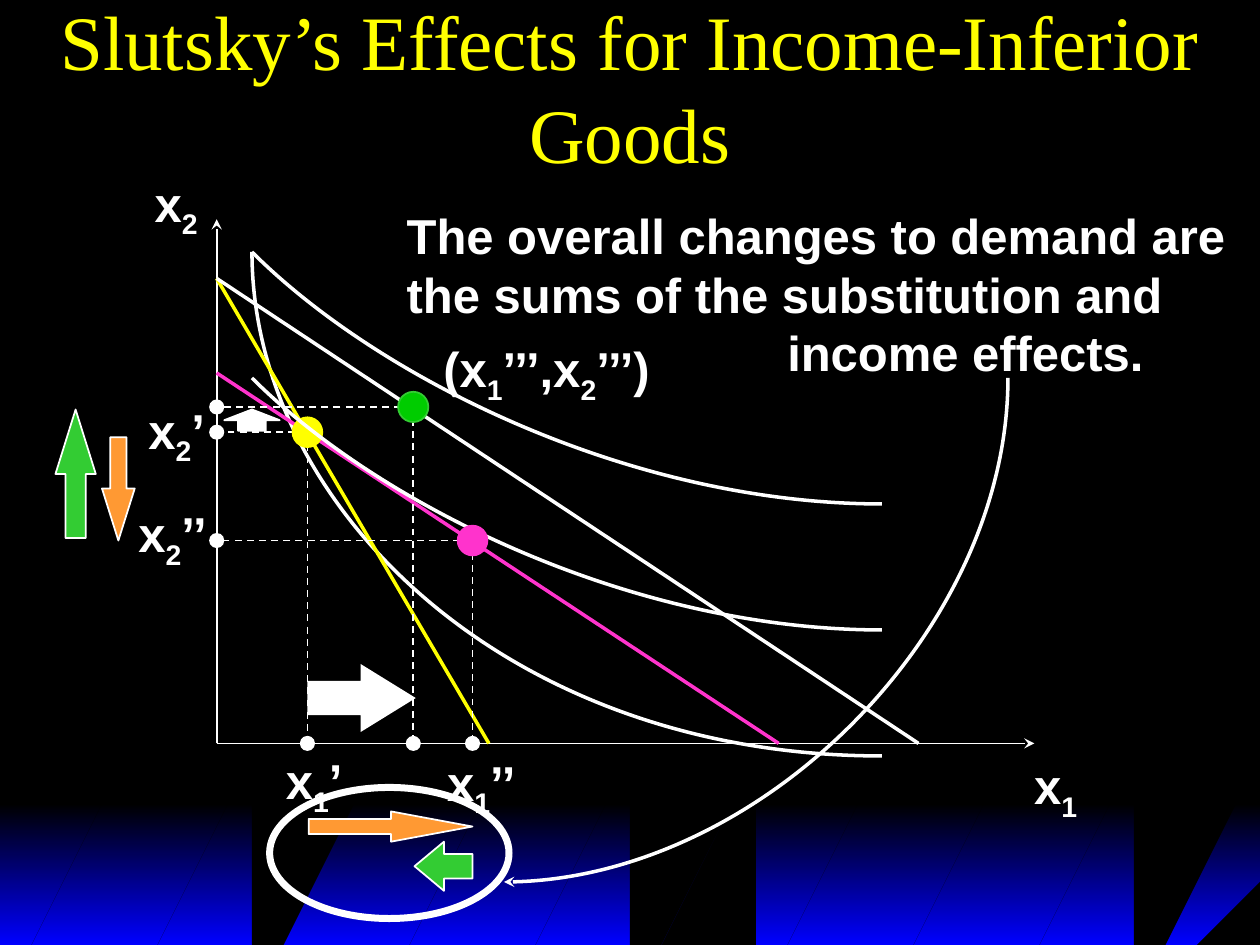
from lxml import etree
from pptx import Presentation, util as u
from pptx.dml.color import RGBColor
from pptx.enum import dml, shapes, text
from pptx.oxml import ns

COLS, ROWS = 10, 7.5
UNIT = u.Inches(1)  # one grid column or row
SHAPE = shapes.MSO_SHAPE

WHITE, BLACK, YELLOW, PINK = "FFFFFF", "000000", "FFFF00", "FF33CC"
GREEN, ORANGE, BLUE = "33CC33", "FF9933", "0000FF"

ORIGIN_X, ORIGIN_Y = 1.72, 5.9
INITIAL, SUBSTITUTED, FINAL = (2.44, 3.43), (3.28, 3.23), (3.75, 4.29)
BUNDLES = (INITIAL, FINAL, SUBSTITUTED)
STRIPES = (0, 0.75, 1.53, 2.3, 3.07, 3.85, 4.6, 5.38, 6.17, 6.96, 7.78, 8.57)


def rgb(color):
    return RGBColor.from_string(color)


def grid(*lengths):
    return [int(n * UNIT) for n in lengths]


def style_line(line, color, width, dashed=False, arrow=False):
    line.color.rgb = rgb(color)
    line.width = u.Pt(width)
    if dashed:
        line.dash_style = dml.MSO_LINE.DASH
    if arrow:
        ln = line.fill._xPr
        etree.SubElement(ln, ns.qn("a:tailEnd"), type="stealth")


def style_shape(sp, fill=None, line=None, width=1):
    sp.shadow.inherit = False
    if fill:
        sp.fill.solid()
        sp.fill.fore_color.rgb = rgb(fill)
    else:
        sp.fill.background()
    if line:
        style_line(sp.line, line, width)
    else:
        sp.line.fill.background()


def add_shape(s, kind, box, fill=None, line=None, width=1, adj=()):
    sp = s.shapes.add_shape(kind, *grid(*box))
    style_shape(sp, fill, line, width)
    for i, value in enumerate(adj):
        sp.adjustments[i] = value
    return sp


def add_dot(s, center, size, fill, line=None):
    x, y = center
    add_shape(s, SHAPE.OVAL, (x - size / 2, y - size / 2, size, size), fill, line)


def add_line(s, start, end, color=WHITE, width=1, dashed=False, arrow=False):
    cn = s.shapes.add_connector(shapes.MSO_CONNECTOR.STRAIGHT, *grid(*start, *end))
    style_line(cn.line, color, width, dashed, arrow)
    etree.SubElement(cn._element.spPr, ns.qn("a:effectLst"))


def add_outline(s, points, close):
    builder = s.shapes.build_freeform(*points[0], scale=UNIT)
    builder.add_line_segments(points[1:], close=close)
    return builder.convert_to_shape()


def add_curve(s, *points, arrow=False):
    """Draw a cubic curve: start, two control points, end."""
    sp = add_outline(s, points, close=False)
    style_shape(sp)
    style_line(sp.line, WHITE, 2, arrow=arrow)
    segments = list(sp._element.iter(ns.qn("a:lnTo")))
    curve = etree.SubElement(segments[0].getparent(), ns.qn("a:cubicBezTo"))
    for segment in segments:
        curve.append(segment[0])
        segment.getparent().remove(segment)


def add_text(s, box, paragraphs, size=28, font="Arial", color=WHITE, bold=True,
             wrap=False):
    """Write paragraphs, each a list of strings; every second one is a subscript."""
    tf = s.shapes.add_textbox(*grid(*box)).text_frame
    tf.word_wrap = wrap
    for i, runs in enumerate(paragraphs):
        p = tf.paragraphs[0] if i == 0 else tf.add_paragraph()
        p.font.size, p.font.name, p.font.bold = u.Pt(size), font, bold
        p.font.color.rgb = rgb(color)
        for j, run in enumerate(runs):
            r = p.add_run()
            r.text = run
            r.font.size, r.font.name, r.font.bold = u.Pt(size), font, bold
            r.font.color.rgb = rgb(color)
            if j % 2:
                r.font._element.set("baseline", "-25000")
    return tf


def add_background(s):
    s.background.fill.solid()
    s.background.fill.fore_color.rgb = rgb(BLACK)
    band = add_shape(s, SHAPE.RECTANGLE, (0, 6.38, COLS, ROWS - 6.38), BLACK)
    band.fill.gradient()
    band.fill.gradient_angle = 270
    for stop, position, color in zip(band.fill.gradient_stops, (0, 1), (BLACK, BLUE)):
        stop.position, stop.color.rgb = position, rgb(color)
    outlines = [[(x, ROWS), (x + 0.84, 6.34), (x + 1, 6.34), (x + 0.17, ROWS)]
                for x in STRIPES]
    outlines.append([(9.4, ROWS), (COLS, 6.64), (COLS, 6.87), (9.56, ROWS)])
    for points in outlines:
        style_shape(add_outline(s, points, close=True), BLACK)


def add_graph(s):
    origin = (ORIGIN_X, ORIGIN_Y)
    add_line(s, origin, (ORIGIN_X, 1.74), arrow=True)
    add_line(s, origin, (8.21, ORIGIN_Y), arrow=True)
    add_curve(s, (7.27, 5.61), (4.42, 5.61), (2.1, 4.07), (2.1, 2.17))
    for top, right, color in ((2.21, 3.88, YELLOW), (2.21, 7.29, WHITE),
                              (2.96, 6.18, PINK)):
        add_line(s, (ORIGIN_X, top), (right, ORIGIN_Y), color, 2)
    for x, y in BUNDLES:
        for foot in ((x, ORIGIN_Y), (ORIGIN_X, y)):
            add_line(s, (x, y), foot, dashed=True)
            add_dot(s, foot, 0.12, WHITE)
    add_curve(s, (6.68, 4.24), (4.64, 4.08), (2.99, 3.33), (2.38, 2.28))
    add_dot(s, INITIAL, 0.25, YELLOW)
    add_dot(s, SUBSTITUTED, 0.24, "00CC00", GREEN)
    add_curve(s, (7.41, 5.35), (4.87, 5.17), (2.85, 4.12), (2.45, 2.75))
    add_dot(s, FINAL, 0.25, PINK)


def add_effect_arrows(s):
    for kind, box, fill, line, head in (
            (SHAPE.DOWN_ARROW, (0.81, 3.47, 0.26, 0.82), ORANGE, WHITE, 1.59),
            (SHAPE.RIGHT_ARROW, (2.45, 6.44, 1.3, 0.24), ORANGE, WHITE, 2.69),
            (SHAPE.LEFT_ARROW, (3.29, 6.68, 0.46, 0.39), GREEN, WHITE, 0.6),
            (SHAPE.UP_ARROW, (0.44, 3.25, 0.32, 1.02), GREEN, WHITE, 1.6),
            (SHAPE.UP_ARROW, (1.78, 3.25, 0.44, 0.17), WHITE, WHITE, 0.5),
            (SHAPE.RIGHT_ARROW, (2.44, 5.27, 0.86, 0.54), WHITE, None, 0.81)):
        add_shape(s, kind, box, fill, line, adj=(0.5, head))
    add_shape(s, SHAPE.OVAL, (2.14, 6.25, 1.9, 1.04), line=WHITE, width=4)
    add_curve(s, (7.89, 3.07), (7.89, 5.11), (6.23, 6.79), (4.12, 6.88), arrow=True)


def add_labels(s):
    for x, y, width, *runs in (
            (1.13, 1.33, 0.57, "x", "2"),
            (8.11, 5.95, 0.57, "x", "1"),
            (1.08, 3.13, 0.67, "x", "2", "’"),
            (1, 3.95, 0.78, "x", "2", "’’"),
            (2.17, 5.91, 0.67, "x", "1", "’"),
            (3.45, 5.92, 0.78, "x", "1", "’’"),
            (3.42, 2.64, 1.94, "(x", "1", "’’’,x", "2", "’’’)")):
        add_text(s, (x, y, width, 0.57), [runs])


def add_title(s):
    tf = add_text(s, (0, 0.02, COLS, 1.33),
                  [["Slutsky’s Effects for Income-Inferior Goods"]],
                  44, "Times New Roman", YELLOW, bold=False, wrap=True)
    tf.vertical_anchor = text.MSO_ANCHOR.MIDDLE
    tf.paragraphs[0].alignment = text.PP_ALIGN.CENTER


def add_conclusion(s):
    tf = add_text(s, (3.13, 1.58, 6.8, 1.5),
                  [["The overall changes to demand are"],
                   ["the sums of the substitution and"],
                   ["income effects."]], wrap=True)
    pPr = tf.paragraphs[2]._p.get_or_add_pPr()
    pPr.set("marL", str(u.Inches(3.02)))
    pPr.set("indent", "0")


def main():
    prs = Presentation()
    prs.slide_width, prs.slide_height = grid(COLS, ROWS)
    s = prs.slides.add_slide(prs.slide_layouts[6])
    add_background(s)
    add_title(s)
    add_graph(s)
    add_labels(s)
    add_effect_arrows(s)
    add_conclusion(s)
    prs.save("out.pptx")


if __name__ == "__main__":
    main()
